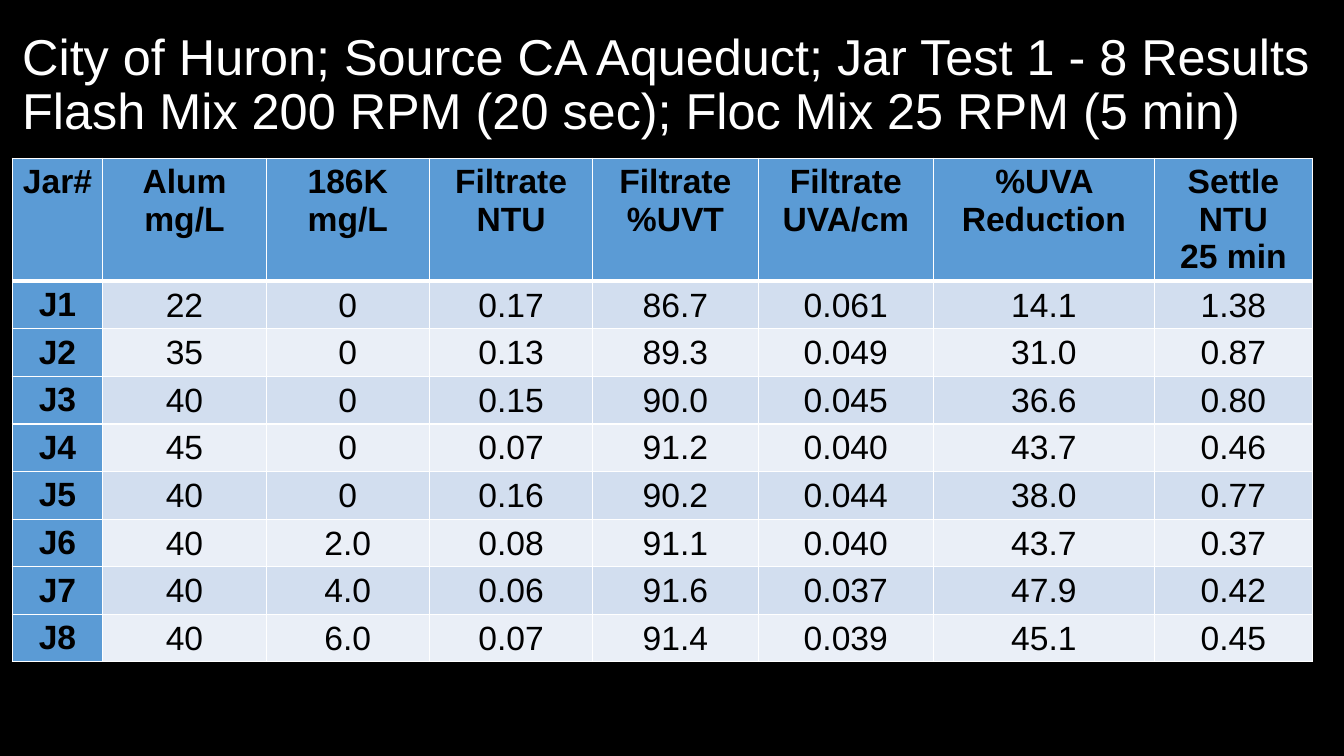
from pptx import Presentation
from pptx.dml.color import RGBColor
from pptx.enum.text import MSO_ANCHOR as Anchor, MSO_AUTO_SIZE as AutoSize, PP_ALIGN as Align
from pptx.oxml import parse_xml
from pptx.oxml.ns import nsdecls
from pptx.util import Inches, Pt

HEADER_BLUE = "5B9BD5"
BANDS = ["D2DEEF", "EAEFF7"]
COLUMN_WIDTHS = [0.9, 1.62, 1.62, 1.62, 1.64, 1.74, 2.19, 1.57]
HEADER_HEIGHT, ROW_HEIGHT = 1.22, 0.47
ROWS = [
    ["Jar#", "Alum\nmg/L", "186K\nmg/L", "Filtrate\nNTU", "Filtrate\n%UVT",
     "Filtrate\nUVA/cm", "%UVA Reduction", "Settle\nNTU\n25 min"],
    ["J1", "22", "0", "0.17", "86.7", "0.061", "14.1", "1.38"],
    ["J2", "35", "0", "0.13", "89.3", "0.049", "31.0", "0.87"],
    ["J3", "40", "0", "0.15", "90.0", "0.045", "36.6", "0.80"],
    ["J4", "45", "0", "0.07", "91.2", "0.040", "43.7", "0.46"],
    ["J5", "40", "0", "0.16", "90.2", "0.044", "38.0", "0.77"],
    ["J6", "40", "2.0", "0.08", "91.1", "0.040", "43.7", "0.37"],
    ["J7", "40", "4.0", "0.06", "91.6", "0.037", "47.9", "0.42"],
    ["J8", "40", "6.0", "0.07", "91.4", "0.039", "45.1", "0.45"],
]


def color(value):
    return RGBColor.from_string(value)


def add_span(para, text, size, shade, bold=False):
    span = para.add_run()
    span.text = text
    span.font.name = "Arial"
    span.font.size = Pt(size)
    span.font.bold = bold
    span.font.color.rgb = color(shade)


deck = Presentation()
deck.slide_width, deck.slide_height = Inches(13.33), Inches(7.5)
page = deck.slides.add_slide(deck.slide_layouts[5])
page.background.fill.solid()
page.background.fill.fore_color.rgb = color("000000")

title = page.shapes.title
title.left, title.top = Inches(0.12), Inches(0.13)
title.width, title.height = Inches(13.03), Inches(1.45)
frame = title.text_frame
frame.auto_size = AutoSize.NONE
frame.word_wrap = True
frame.vertical_anchor = Anchor.MIDDLE
para = frame.paragraphs[0]
para.alignment = Align.LEFT
para.line_spacing = 0.9
add_span(para, "City of Huron; Source CA Aqueduct; Jar Test 1 - 8 Results", 36, "FFFFFF")
para.add_line_break()
add_span(para, "Flash Mix 200 RPM (20 sec); Floc Mix 25 RPM (5 min)", 36, "FFFFFF")

table_height = HEADER_HEIGHT + ROW_HEIGHT * (len(ROWS) - 1)
results = page.shapes.add_table(
    len(ROWS), len(COLUMN_WIDTHS), Inches(0.12), Inches(1.57),
    Inches(sum(COLUMN_WIDTHS)), Inches(table_height)).table
results.first_col = True
for column, width in zip(results.columns, COLUMN_WIDTHS):
    column.width = Inches(width)

for row_index, values in enumerate(ROWS):
    is_header = row_index == 0
    results.rows[row_index].height = Inches(HEADER_HEIGHT if is_header else ROW_HEIGHT)
    for column_index, value in enumerate(values):
        cell = results.cell(row_index, column_index)
        is_label = is_header or column_index == 0
        if not is_label:
            cell.vertical_anchor = Anchor.MIDDLE
            cell.margin_left = cell.margin_right = cell.margin_top = Inches(0.01)
            cell.margin_bottom = 0
        properties = cell._tc.get_or_add_tcPr()
        top = 3 if row_index == 1 else 1
        bottom = 3 if is_header else 1
        for side, points in {"L": 1, "R": 1, "T": top, "B": bottom}.items():
            properties.append(parse_xml(
                f'<a:ln{side} {nsdecls("a")} w="{Pt(points)}"><a:solidFill>'
                f'<a:srgbClr val="FFFFFF"/></a:solidFill></a:ln{side}>'))
        cell.fill.solid()
        cell.fill.fore_color.rgb = color(HEADER_BLUE if is_label else BANDS[(row_index - 1) % 2])
        for line_index, line in enumerate(value.split("\n")):
            frame = cell.text_frame
            para = frame.add_paragraph() if line_index else frame.paragraphs[0]
            para.alignment = Align.CENTER
            add_span(para, line, 24, "000000", is_label)

deck.save("out.pptx")
